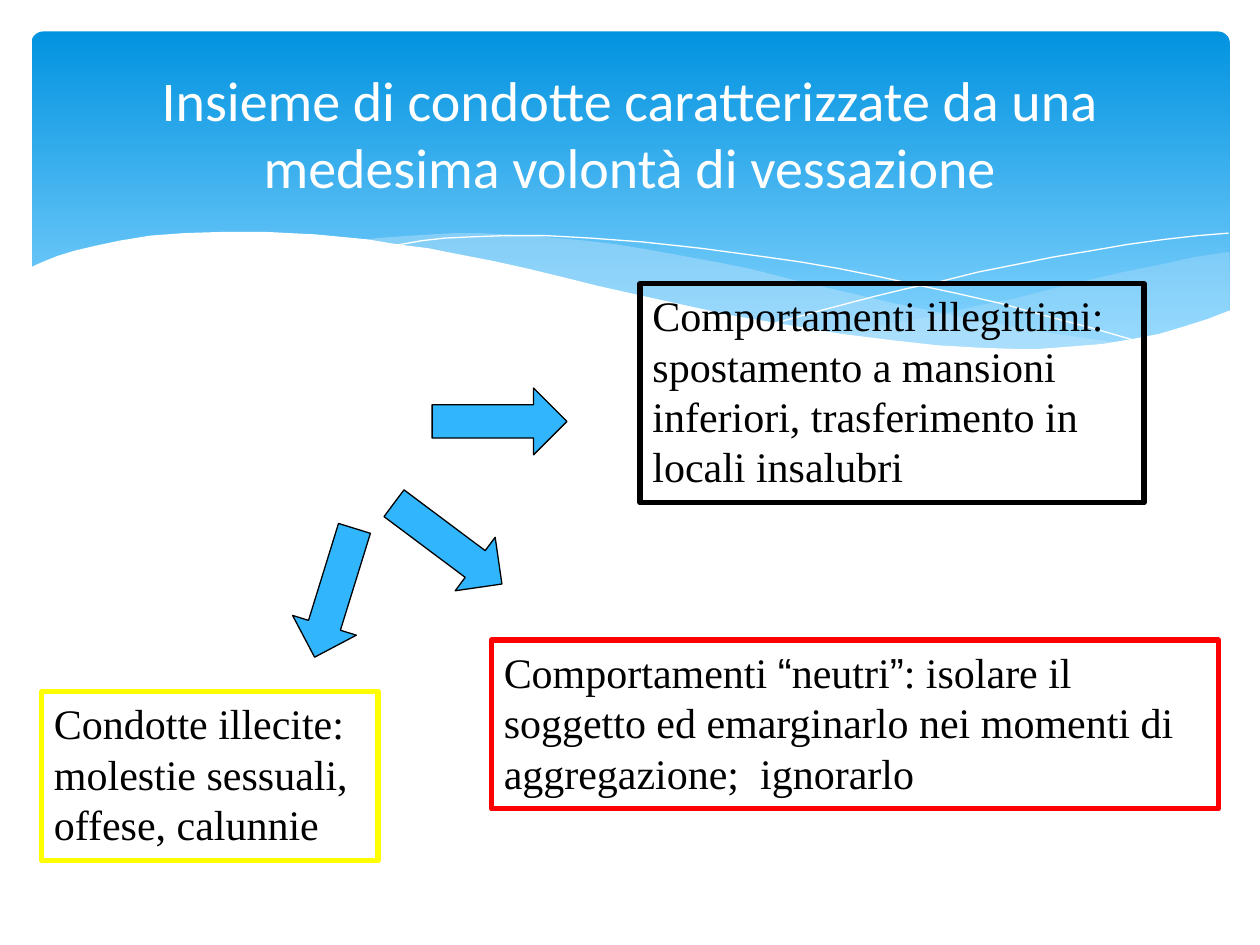
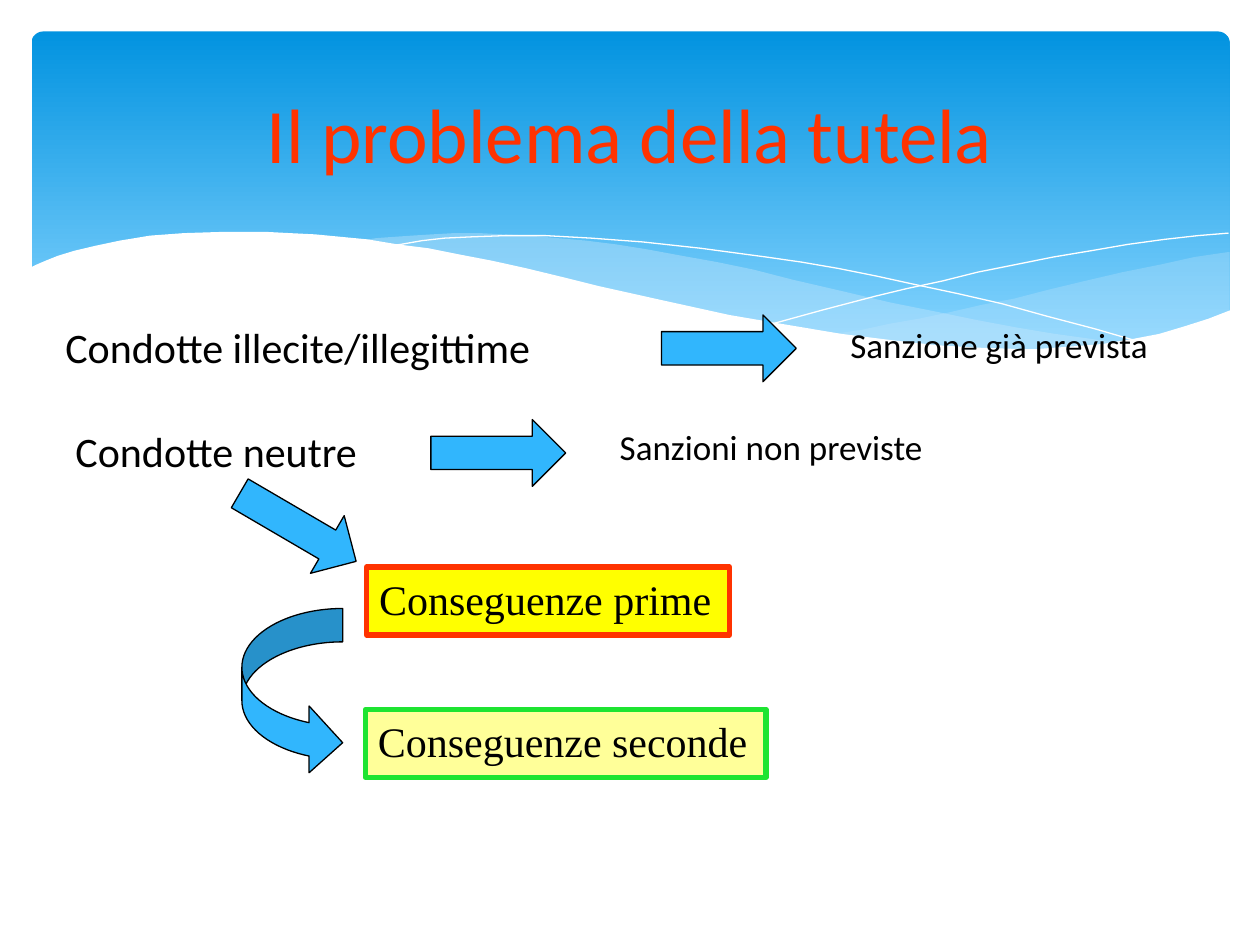
from itertools import groupby

from lxml.etree import SubElement
from pptx import Presentation
from pptx.dml.color import RGBColor
from pptx.enum.shapes import MSO_SHAPE
from pptx.enum.text import MSO_ANCHOR, PP_ALIGN
from pptx.oxml.ns import qn
from pptx.util import Pt

PX = 9144
BLACK = RGBColor(0x00, 0x00, 0x00)
WHITE = RGBColor(0xFF, 0xFF, 0xFF)
DEEP_BLUE = RGBColor(0x02, 0x93, 0xE0)
PALE_BLUE = RGBColor(0x83, 0xD3, 0xFE)
MIST = RGBColor(0xC6, 0xE7, 0xFC)
ARROW_BLUE = RGBColor(0x31, 0xB6, 0xFD)
RED = RGBColor(0xFF, 0x00, 0x00)
ORANGE = RGBColor(0xFF, 0x33, 0x00)
YELLOW = RGBColor(0xFF, 0xFF, 0x00)
CREAM = RGBColor(0xFF, 0xFF, 0x99)
GREEN = RGBColor(0x1E, 0xE4, 0x31)
SANS, SERIF, QUOTE_FONT = "Calibri", "Times New Roman", "Arial"
QUOTES = "“”"

RIGHT_WAVE = [
    (975, 200), (948, 204), (921, 210), (891, 216), (861, 223), (832, 230),
    (805, 237), (779, 242), (753, 248), (729, 253), (706, 257), (683, 262),
    (661, 265), (691, 269), (719, 272), (745, 275), (769, 277), (792, 277),
    (814, 278), (835, 277), (854, 276), (872, 274), (889, 272), (905, 269),
    (921, 265), (935, 262), (949, 257), (963, 252), (976, 247), (976, 200)]
MIDDLE_WAVE = [
    (893, 273), (866, 269), (837, 265), (807, 260), (775, 254), (741, 247),
    (706, 240), (668, 231), (629, 222), (598, 214), (569, 208), (541, 203),
    (514, 198), (489, 194), (465, 191), (442, 189), (420, 187), (399, 186),
    (380, 185), (361, 185), (344, 186), (328, 187), (313, 188), (299, 189),
    (286, 191), (323, 196), (362, 203), (404, 211), (449, 222), (491, 232),
    (530, 240), (566, 248), (601, 255), (634, 261), (665, 266), (695, 270),
    (722, 274), (748, 276), (773, 277), (796, 278), (828, 278), (857, 277),
    (876, 275)]
FALLING_LINE = [
    (309, 195), (318, 194), (335, 191), (353, 189), (374, 188), (401, 187),
    (433, 187), (469, 189), (510, 192), (556, 197), (608, 204), (636, 208),
    (665, 213), (695, 219), (727, 226), (760, 233), (795, 241), (831, 251),
    (869, 261), (907, 272)]
RISING_LINE = [
    (613, 257), (653, 246), (695, 235), (720, 229), (748, 223), (776, 216),
    (806, 210), (836, 204), (866, 199), (895, 194), (924, 190), (951, 187),
    (975, 185)]
LOWER_EDGE = [
    (977, 246), (959, 253), (940, 259), (920, 265), (899, 269), (875, 273),
    (850, 275), (823, 277), (809, 277), (778, 276), (744, 274), (708, 270),
    (668, 265), (626, 258), (579, 250), (529, 239), (475, 227), (447, 220),
    (418, 213), (391, 207), (365, 202), (340, 197), (316, 194), (292, 190),
    (271, 188), (250, 186), (230, 185), (211, 184), (177, 184), (146, 185),
    (119, 187), (95, 191), (76, 195), (59, 199), (46, 203), (36, 207),
    (29, 210), (23, 213), (23, 329), (977, 329)]


class Deck:
    def __init__(self):
        self.presentation = Presentation()
        self.presentation.slide_width = 1000 * PX
        self.presentation.slide_height = 750 * PX
        self.layout = self.presentation.slide_layouts[5]
        self.slide = None

    def add_slide(self, heading, size, color):
        first = self.slide is None
        self.slide = self.presentation.slides.add_slide(self.layout)
        if first:
            self.share_band()
        title = self.slide.shapes.title
        title.left, title.top, title.width, title.height = (
            50 * PX, 37 * PX, 900 * PX, 137 * PX)
        title.text_frame.text = heading
        title.text_frame.vertical_anchor = MSO_ANCHOR.MIDDLE
        paragraph = title.text_frame.paragraphs[0]
        paragraph.alignment = PP_ALIGN.CENTER
        self.style(paragraph.runs[0].font, SANS, size, color)

    def share_band(self):
        band = self.shape(MSO_SHAPE.ROUNDED_RECTANGLE, (25, 25, 951, 270))
        band.adjustments[0] = 0.034
        band.fill.gradient()
        band.fill.gradient_angle = 270
        for stop, color, position in zip(
                band.fill.gradient_stops, (DEEP_BLUE, PALE_BLUE), (0, 0.9)):
            stop.color.rgb = color
            stop.position = position
        parts = [
            band,
            self.outline(RIGHT_WAVE, fill=MIST, opacity=29),
            self.outline(MIDDLE_WAVE, fill=MIST, opacity=40),
            self.outline(FALLING_LINE, line=WHITE),
            self.outline(RISING_LINE, line=WHITE),
            self.outline(LOWER_EDGE, fill=WHITE)]
        for number, part in enumerate(parts, 101):
            part._element.nvSpPr.cNvPr.set("id", str(number))
            self.layout.shapes._spTree.append(part._element)

    def style(self, font, face, size, color):
        font.name, font.size, font.color.rgb = face, Pt(size), color

    def paint(self, shape, fill, line, width):
        shape.shadow.inherit = False
        if fill is None:
            shape.fill.background()
        else:
            shape.fill.solid()
            shape.fill.fore_color.rgb = fill
        if line is None:
            shape.line.fill.background()
        else:
            shape.line.color.rgb = line
            shape.line.width = Pt(width)

    def shape(self, kind, box, fill=None, line=None, width=0.75):
        shape = self.slide.shapes.add_shape(kind, *(n * PX for n in box))
        self.paint(shape, fill, line, width)
        return shape

    def outline(self, points, fill=None, line=None, opacity=100):
        builder = self.slide.shapes.build_freeform(*points[0], scale=PX)
        builder.add_line_segments(points[1:], close=fill is not None)
        shape = builder.convert_to_shape()
        self.paint(shape, fill, line, 0)
        if opacity < 100:
            color = shape._element.spPr.find(qn("a:solidFill"))[0]
            SubElement(color, qn("a:alpha")).set("val", str(opacity * 1000))
        return shape

    def fill_text(self, shape, text, face, size):
        frame = shape.text_frame
        frame.word_wrap = True
        frame.vertical_anchor = MSO_ANCHOR.TOP
        paragraph = frame.paragraphs[0]
        paragraph.alignment = PP_ALIGN.LEFT
        for quoted, letters in groupby(text, lambda letter: letter in QUOTES):
            run = paragraph.add_run()
            run.text = "".join(letters)
            self.style(run.font, QUOTE_FONT if quoted else face, size, BLACK)

    def framed(self, text, box, line, fill=None):
        frame = self.shape(MSO_SHAPE.RECTANGLE, box, fill, line, 3)
        self.fill_text(frame, text, SERIF, 24)

    def label(self, text, box, size):
        caption = self.slide.shapes.add_textbox(*(n * PX for n in box))
        self.fill_text(caption, text, SANS, size)

    def arrow(self, left, top, rotation=0, kind=MSO_SHAPE.RIGHT_ARROW):
        size = (53, 107) if kind == MSO_SHAPE.DOWN_ARROW else (107, 53)
        arrow = self.shape(kind, (left, top, *size), ARROW_BLUE, BLACK)
        arrow.rotation = rotation

    def curved_arrow(self, box):
        arrow = self.shape(
            MSO_SHAPE.CURVED_RIGHT_ARROW, box, ARROW_BLUE, BLACK)
        for index, value in enumerate((0.331, 0.662, 0.333)):
            arrow.adjustments[index] = value


def add_conduct(deck):
    deck.add_slide(
        "Insieme di condotte caratterizzate da una medesima volontà "
        "di vessazione", 32, WHITE)
    deck.framed(
        "Comportamenti illegittimi: spostamento a mansioni inferiori, "
        "trasferimento in locali insalubri", (508, 225, 400, 174), BLACK)
    deck.framed(
        "Condotte illecite: molestie sessuali, offese, calunnie",
        (33, 549, 267, 134), YELLOW)
    deck.arrow(343, 308)
    deck.arrow(239, 417, 17.2, MSO_SHAPE.DOWN_ARROW)
    deck.framed(
        "Comportamenti “neutri”: isolare il soggetto ed emarginarlo nei "
        "momenti di aggregazione;  ignorarlo", (390, 508, 577, 134), RED)
    deck.arrow(302, 405, 36.8)


def add_protection(deck):
    deck.add_slide("Il problema della tutela", 44, ORANGE)
    deck.label("Condotte illecite/illegittime", (42, 250, 453, 50), 24)
    deck.label("Condotte neutre", (50, 333, 275, 50), 24)
    deck.arrow(525, 250)
    deck.label("Sanzione già prevista", (665, 252, 295, 43), 20)
    deck.arrow(342, 333)
    deck.label("Sanzioni non previste", (482, 333, 295, 43), 20)
    deck.framed("Conseguenze prime", (291, 450, 288, 54), ORANGE, YELLOW)
    deck.arrow(210, 365, 300.3, MSO_SHAPE.DOWN_ARROW)
    deck.framed("Conseguenze seconde", (290, 563, 318, 54), GREEN, CREAM)
    deck.curved_arrow((192, 483, 80, 133))


def main():
    deck = Deck()
    add_conduct(deck)
    add_protection(deck)
    deck.presentation.save("out.pptx")


if __name__ == "__main__":
    main()
